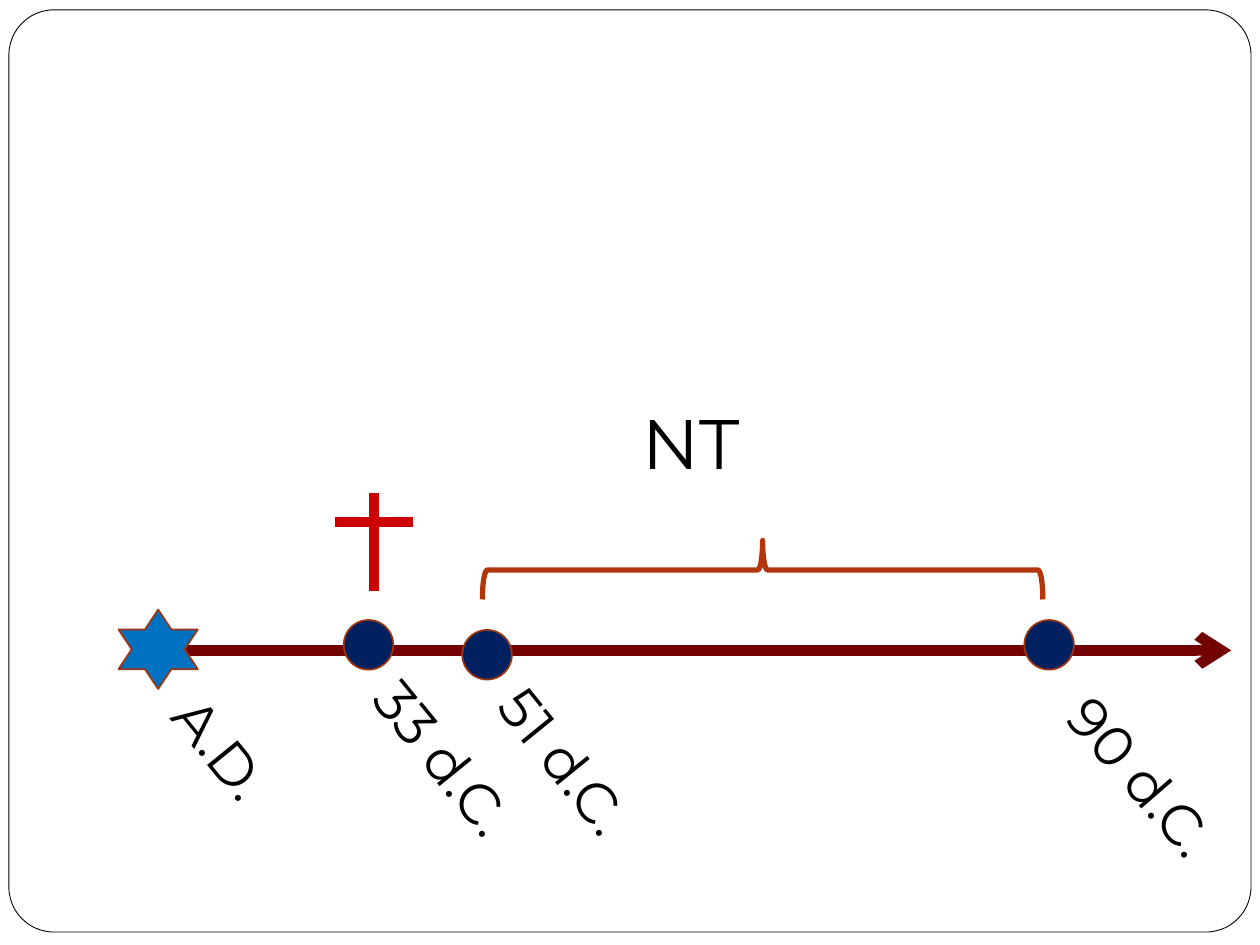
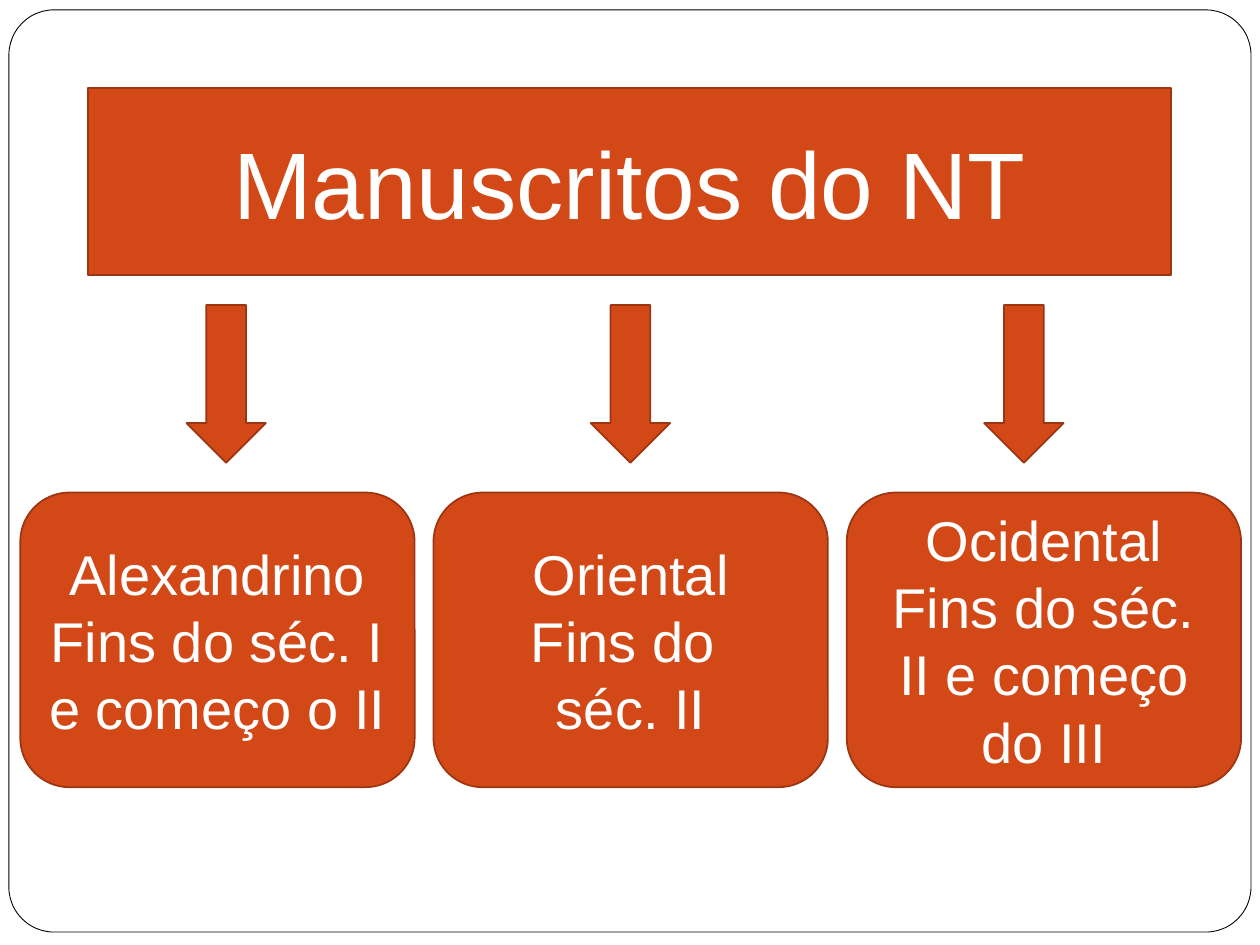
from lxml import etree
from pptx import Presentation
from pptx.dml.color import RGBColor
from pptx.enum.shapes import MSO_CONNECTOR, MSO_SHAPE
from pptx.enum.text import MSO_ANCHOR, MSO_AUTO_SIZE, PP_ALIGN
from pptx.oxml.ns import qn
from pptx.util import Cm, Pt

ROUNDED = MSO_SHAPE.ROUNDED_RECTANGLE
STAR = MSO_SHAPE.STAR_6_POINT
CIRCLE = MSO_SHAPE.OVAL
BRACE = MSO_SHAPE.RIGHT_BRACE
DOWN_ARROW = MSO_SHAPE.DOWN_ARROW
STRAIGHT = MSO_CONNECTOR.STRAIGHT
MIDDLE = MSO_ANCHOR.MIDDLE
CENTER = PP_ALIGN.CENTER
NO_FIT = MSO_AUTO_SIZE.NONE
GROW = MSO_AUTO_SIZE.SHAPE_TO_FIT_TEXT

BLACK = RGBColor(0x00, 0x00, 0x00)
WHITE = RGBColor(0xFF, 0xFF, 0xFF)
ORANGE = RGBColor(0xD3, 0x48, 0x17)
RUST = RGBColor(0x9C, 0x35, 0x11)
BRACE_RUST = RGBColor(0xB1, 0x36, 0x0B)
MAROON = RGBColor(0x72, 0x02, 0x02)
RED = RGBColor(0xCC, 0x00, 0x00)
BLUE = RGBColor(0x00, 0x70, 0xC0)
NAVY = RGBColor(0x00, 0x20, 0x60)


def add_figure(page, kind, left, top, width, height, fill, line=RUST, weight=1):
    figure = page.shapes.add_shape(kind, Cm(left), Cm(top), Cm(width), Cm(height))
    figure.shadow.inherit = False
    if fill is None:
        figure.fill.background()
    else:
        figure.fill.solid()
        figure.fill.fore_color.rgb = fill
    figure.line.color.rgb = line
    figure.line.width = Pt(weight)
    return figure


def set_text(box, text, size, font, color, align=None):
    box.text_frame.text = text
    for para in box.text_frame.paragraphs:
        para.alignment = align
        for span in para.runs:
            span.font.size = Pt(size)
            span.font.name = font
            span.font.color.rgb = color


deck = Presentation()
deck.slide_width, deck.slide_height = Cm(25.4), Cm(19.05)
timeline = deck.slides.add_slide(deck.slide_layouts[6])
manuscripts = deck.slides.add_slide(deck.slide_layouts[5])

# Shared frame, moved to the back of the slide master
frame = add_figure(timeline, ROUNDED, 0.18, 0.2, 25.04, 18.59, WHITE, BLACK, 0.5)
frame.adjustments[0] = 0.049
frame._element.nvSpPr.cNvPr.set("id", "20")
deck.slide_master.shapes._spTree.insert(2, frame._element)

# Timeline: axis and the two strokes of the cross
axis_and_cross = [
    (2.97, 13.11, 24.82, 13.11, MAROON),
    (7.54, 9.93, 7.54, 11.91, RED),
    (8.33, 10.52, 6.76, 10.52, RED),
]
for x1, y1, x2, y2, color in axis_and_cross:
    stroke = timeline.shapes.add_connector(STRAIGHT, Cm(x1), Cm(y1), Cm(x2), Cm(y2))
    stroke.line.color.rgb = color
    stroke.line.width = Pt(6)
    if color == MAROON:
        etree.SubElement(stroke.line._get_or_add_ln(), qn("a:tailEnd"), type="arrow")
    etree.SubElement(stroke._element.spPr, qn("a:effectLst"))

# Timeline: events
add_figure(timeline, STAR, 2.39, 12.29, 1.6, 1.6, BLUE)
for left, top in [(6.93, 12.5), (9.32, 12.7), (20.65, 12.5)]:
    add_figure(timeline, CIRCLE, left, top, 1, 1, NAVY)
brace = add_figure(timeline, BRACE, 14.78, 5.84, 1.19, 11.3, None, BRACE_RUST, 3)
brace.rotation = 270

# Timeline: labels
labels = [
    ("A.D.", 2.77, 14.94, 4.5, 1.63, 50.9, 32, True),
    ("33 d.C.", 6.76, 14.73, 4.83, 1.63, 50.9, 32, False),
    ("51 d.C.", 9.27, 14.88, 4.83, 1.63, 50.9, 32, False),
    ("90 d.C.", 20.78, 15.04, 4.83, 1.63, 49.1, 32, False),
    ("NT", 12.7, 7.92, 3, 1.96, 0, 40, True),
]
for text, left, top, width, height, angle, size, wrap in labels:
    label = timeline.shapes.add_textbox(Cm(left), Cm(top), Cm(width), Cm(height))
    label.rotation = angle
    label.text_frame.word_wrap = wrap
    label.text_frame.auto_size = GROW
    set_text(label, text, size, "Montserrat", BLACK)

# Manuscripts: title in a rounded box
title = manuscripts.shapes.title
title.left, title.top, title.width, title.height = Cm(1.78), Cm(1.78), Cm(21.82), Cm(3.76)
outline = etree.SubElement(title._element.spPr, qn("a:prstGeom"), prst="roundRect")
etree.SubElement(outline, qn("a:avLst"))
title.fill.solid()
title.fill.fore_color.rgb = ORANGE
title.line.color.rgb = RUST
title.line.width = Pt(1)
title.text_frame.auto_size = NO_FIT
title.text_frame.vertical_anchor = MIDDLE
set_text(title, "Manuscritos do NT", 54, "Arial", WHITE, CENTER)

# Manuscripts: families and the arrows leading to them
families = [
    ("Alexandrino\nFins do séc. I e começo o II", 3.76),
    ("Oriental\nFins do \nséc. II", 11.91),
    ("Ocidental\nFins do séc. II e começo do III", 19.84),
]
for column, (text, arrow_left) in enumerate(families):
    family = add_figure(manuscripts, ROUNDED, 0.41 + 8.33 * column, 9.93, 7.95, 5.94, ORANGE)
    family.text_frame.word_wrap = True
    family.text_frame.vertical_anchor = MIDDLE
    set_text(family, text, 32, "Arial", WHITE, CENTER)
    add_figure(manuscripts, DOWN_ARROW, arrow_left, 6.15, 1.6, 3.18, ORANGE)

deck.save("out.pptx")
